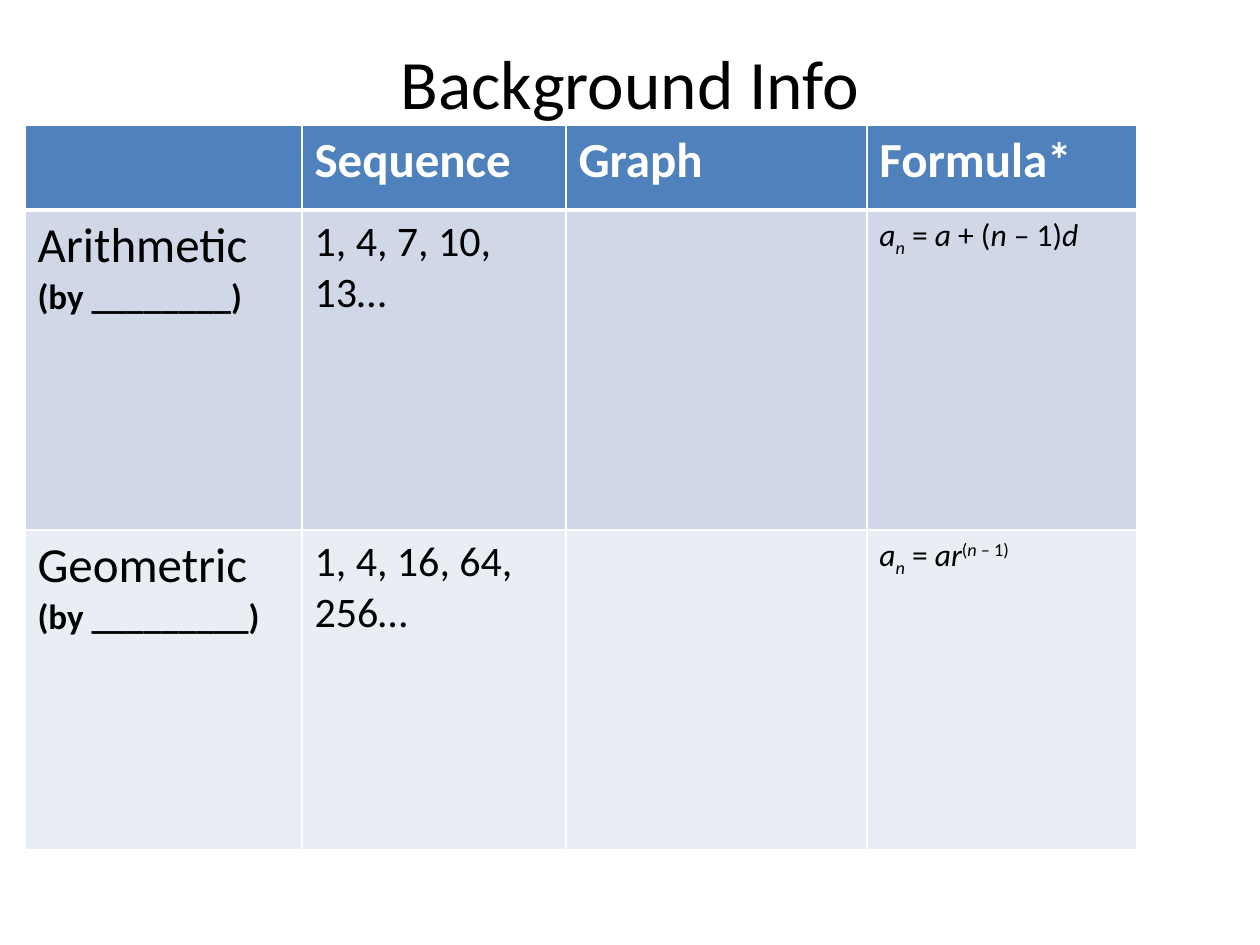
from dataclasses import dataclass

from lxml import etree
from pptx import Presentation
from pptx.dml.color import RGBColor
from pptx.enum.text import MSO_ANCHOR, PP_ALIGN
from pptx.oxml.ns import qn
from pptx.util import Emu, Pt

MIDDLE = MSO_ANCHOR.MIDDLE
CENTER = PP_ALIGN.CENTER
BLANK = 6


@dataclass(frozen=True)
class Theme:
    font: str = "Calibri"
    ink: str = "000000"
    white: str = "FFFFFF"
    head: str = "4F81BD"
    bands: tuple[str, ...] = ("D0D8E8", "E9EDF4")
    title: float = 39.6
    large: int = 28
    medium: int = 24
    note: int = 20
    small: int = 18


@dataclass(frozen=True)
class Part:
    text: str
    italic: bool = False
    base: int = 0  # raised or lowered, in percent


@dataclass(frozen=True)
class Row:
    name: str
    hint: str
    terms: str
    rule: tuple[Part, ...]


THEME = Theme()
HEADS = ("", "Sequence", "Graph", "Formula*")
COLS = (277, 264, 301, 270)
HEIGHTS = (85, 320, 320)
ROWS = (
    Row("Arithmetic", "(by ________)", "1, 4, 7, 10, 13…", (
        Part("a", True), Part("n", True, -25), Part(" = "), Part("a", True),
        Part(" + ("), Part("n", True), Part(" – 1)"), Part("d", True))),
    Row("Geometric", "(by _________)", "1, 4, 16, 64, 256…", (
        Part("a", True), Part("n", True, -25), Part(" = "), Part("ar", True),
        Part("(", base=30), Part("n", True, 30), Part(" – 1)", base=30))),
)


def px(count: int) -> Emu:
    """Turn px into EMU at 126 px to the inch."""
    return Emu(round(count * 914400 / 126))


def write(para, text: str, *, size: float, color: str = THEME.ink,
          bold: bool = False, italic: bool = False, base: int = 0) -> None:
    """Add one formatted run to a paragraph."""
    run = para.add_run()
    run.text = text
    font = run.font
    font.name, font.size = THEME.font, Pt(size)
    font.bold, font.italic = bold, italic
    font.color.rgb = RGBColor.from_string(color)
    if base:
        font._element.set("baseline", str(base * 1000))


def edge(cell, side: str, width: float) -> None:
    """Add one white border; call in the order L, R, T, B."""
    line = etree.SubElement(cell._tc.get_or_add_tcPr(), qn(f"a:ln{side}"),
                            w=str(Pt(width)))
    fill = etree.SubElement(line, qn("a:solidFill"))
    etree.SubElement(fill, qn("a:srgbClr"), val=THEME.white)


def paint(cell, row: int, color: str) -> None:
    """Set borders, with a thick line under the heads, then the fill."""
    widths = {"L": 1, "R": 1, "T": 3 if row == 1 else 1,
              "B": 3 if row == 0 else 1}
    for side, width in widths.items():
        edge(cell, side, width)
    cell.fill.solid()
    cell.fill.fore_color.rgb = RGBColor.from_string(color)


def draw_title(slide, text: str) -> None:
    box = slide.shapes.add_textbox(px(63), px(38), px(1134), px(87))
    frame = box.text_frame
    frame.word_wrap = True
    frame.vertical_anchor = MIDDLE
    para = frame.paragraphs[0]
    para.alignment = CENTER
    write(para, text, size=THEME.title)


def draw_row(table, index: int, row: Row) -> None:
    name, terms, _, rule = (
        table.cell(index, col).text_frame for col in range(len(COLS)))
    write(name.paragraphs[0], row.name, size=THEME.large)
    write(name.add_paragraph(), row.hint, size=THEME.note, bold=True)
    write(terms.paragraphs[0], row.terms, size=THEME.medium)
    for part in row.rule:
        write(rule.paragraphs[0], part.text, size=THEME.small,
              italic=part.italic, base=part.base)


def draw_table(slide) -> None:
    table = slide.shapes.add_table(
        len(HEIGHTS), len(COLS), px(25), px(125),
        px(sum(COLS)), px(sum(HEIGHTS))).table
    for col, width in zip(table.columns, COLS):
        col.width = px(width)
    for row, height in zip(table.rows, HEIGHTS):
        row.height = px(height)

    # Fills and borders
    for index, color in enumerate((THEME.head, *THEME.bands)):
        for cell in table.rows[index].cells:
            paint(cell, index, color)

    # Heads, then body
    for col, head in enumerate(HEADS):
        if head:
            write(table.cell(0, col).text_frame.paragraphs[0], head,
                  size=THEME.large, color=THEME.white, bold=True)
    for index, row in enumerate(ROWS, 1):
        draw_row(table, index, row)


def main() -> None:
    deck = Presentation()
    deck.slide_width, deck.slide_height = px(1260), px(945)
    slide = deck.slides.add_slide(deck.slide_layouts[BLANK])
    draw_title(slide, "Background Info")
    draw_table(slide)
    deck.save("out.pptx")


if __name__ == "__main__":
    main()
